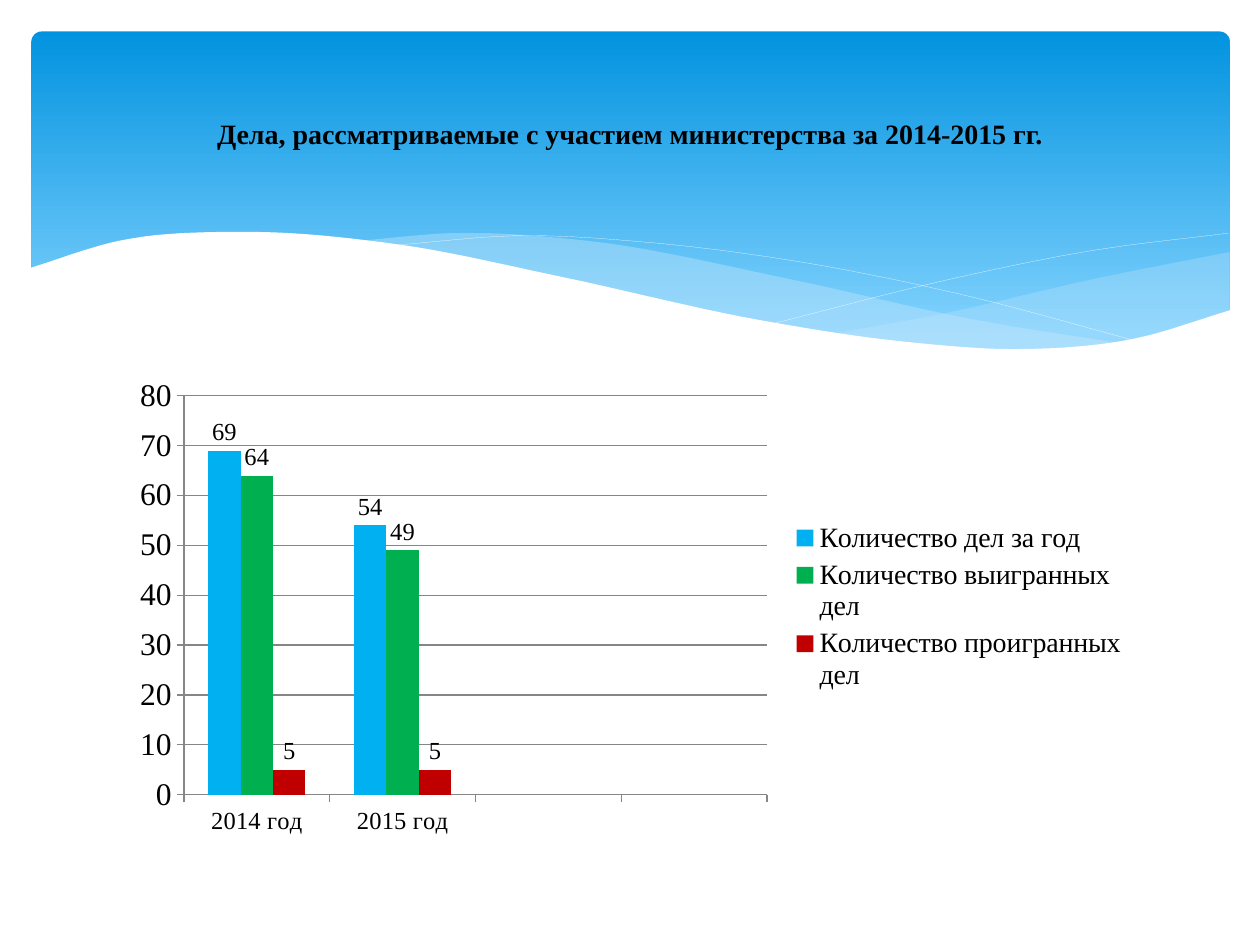
from lxml import etree
from pptx import Presentation, util as u
from pptx.chart.data import CategoryChartData
from pptx.dml.color import RGBColor
from pptx.enum import chart as ch, shapes, text
from pptx.oxml.ns import qn

SERIF = "Times New Roman"
BLACK, WHITE, GRAY, PALE_BLUE = "000000", "FFFFFF", "868686", "C6E7FC"
UNITS_PER_INCH = 1000
STEPS = 10

RIGHT_TOP = [(6.61, 2.65), (7.53, 2.48), (8.61, 2.23), (9.76, 2)]
RIGHT_BOTTOM = [(6.61, 2.65), (7.45, 2.75), (8.14, 2.78), (8.97, 2.7), (9.76, 2.47)]
MIDDLE_TOP = [(2.86, 1.91), (3.61, 1.85), (4.65, 1.91), (6.29, 2.22), (7.75, 2.54), (8.93, 2.73)]
MIDDLE_BOTTOM = [(2.86, 1.91), (4.91, 2.32), (6.34, 2.61), (7.48, 2.76), (8.18, 2.78), (8.93, 2.73)]
FALLING_CURVE = [(3.09, 1.95), (4.16, 1.87), (5.1, 1.92), (6.36, 2.08), (7.6, 2.33), (9.07, 2.72)]
RISING_CURVE = [(6.13, 2.57), (7.48, 2.23), (8.66, 1.99), (9.75, 1.85)]
WHITE_TOP = [(0.23, 2.13), (0.95, 1.91), (1.93, 1.84), (3.16, 1.94), (4.47, 2.2),
             (6.03, 2.54), (7.26, 2.72), (8.09, 2.77), (8.99, 2.69), (9.77, 2.46)]
WHITE_BOTTOM = [(0.23, 3.29), (9.77, 3.29)]

CATEGORIES = ["2014 год", "2015 год", "", ""]
SERIES = [
    ("Количество дел за год", (69, 54, None, None), "00B0F0"),
    ("Количество выигранных дел", (64, 49, None, None), "00B050"),
    ("Количество проигранных дел", (5, 5, None, None), "C00000"),
]


def rgb(value):
    """Turn a hex string into a colour."""
    return RGBColor.from_string(value)


def fill_solid(fill, color):
    """Give a fill one plain colour."""
    fill.solid()
    fill.fore_color.rgb = rgb(color)


def set_font(font, size, name=SERIF, bold=False):
    """Format a font in black."""
    font.size, font.name, font.bold = u.Pt(size), name, bold
    font.color.rgb = rgb(BLACK)


def knot_slopes(knots):
    """Return the slope at each knot, averaged over its two neighbouring spans."""
    spans = [(x1 - x0, (y1 - y0) / (x1 - x0)) for (x0, y0), (x1, y1) in zip(knots, knots[1:])]
    inner = [(w1 * s0 + w0 * s1) / (w0 + w1) for (w0, s0), (w1, s1) in zip(spans, spans[1:])]
    return [spans[0][1], *inner, spans[-1][1]]


def smooth(knots):
    """Return points on a cubic Hermite curve that runs through the knots."""
    slopes = knot_slopes(knots)
    points = [knots[0]]
    for i, ((x0, y0), (x1, y1)) in enumerate(zip(knots, knots[1:])):
        width = x1 - x0
        for step in range(1, STEPS + 1):
            t = step / STEPS
            ease = t * t * (3 - 2 * t)
            bend = t * (1 - t) * ((1 - t) * slopes[i] - t * slopes[i + 1])
            points.append((x0 + t * width, y0 + ease * (y1 - y0) + width * bend))
    return points


def add_outline(slide, points, closed):
    """Build a freeform from points in inches."""
    grid = [(round(x * UNITS_PER_INCH), round(y * UNITS_PER_INCH)) for x, y in points]
    builder = slide.shapes.build_freeform(*grid[0], scale=u.Inches(1) / UNITS_PER_INCH)
    builder.add_line_segments(grid[1:], close=closed)
    sp = builder.convert_to_shape()
    sp.shadow.inherit = False
    return sp


def add_wave(slide, top, bottom, color, opacity=100):
    """Fill the area between two smooth edges, with opacity in percent."""
    sp = add_outline(slide, smooth(top) + smooth(bottom)[::-1], True)
    sp.line.fill.background()
    fill_solid(sp.fill, color)
    if opacity < 100:
        clr = sp._element.spPr.find(qn("a:solidFill"))[0]
        etree.SubElement(clr, qn("a:alpha")).set("val", str(opacity * 1000))


def add_curve(slide, knots):
    """Add a white hairline curve."""
    sp = add_outline(slide, smooth(knots), False)
    sp.fill.background()
    sp.line.color.rgb = rgb(WHITE)
    sp.line.width = u.Pt(0.1)


def add_banner(slide):
    """Add the rounded blue gradient panel."""
    sp = slide.shapes.add_shape(shapes.MSO_SHAPE.ROUNDED_RECTANGLE,
                                *map(u.Inches, (0.25, 0.25, 9.51, 2.7)))
    sp.shadow.inherit = False
    sp.adjustments[0] = 0.03
    sp.line.fill.background()
    sp.fill.gradient()
    sp.fill.gradient_angle = 270
    stops = ((0, "0293E0"), (0.9, "83D3FE"))
    for stop, (position, color) in zip(sp.fill.gradient_stops, stops):
        stop.position = position
        stop.color.rgb = rgb(color)


def format_axis(axis, size):
    """Style the line, ticks and labels of an axis."""
    axis.major_tick_mark = ch.XL_TICK_MARK.OUTSIDE
    axis.minor_tick_mark = ch.XL_TICK_MARK.NONE
    axis.format.line.color.rgb = rgb(GRAY)
    set_font(axis.tick_labels.font, size)


def format_series(series, color):
    """Colour the columns of a series and label them with their values."""
    fill_solid(series.format.fill, color)
    labels = series.data_labels
    labels.show_value = True
    labels.position = ch.XL_LABEL_POSITION.OUTSIDE_END
    set_font(labels.font, 14)


def add_cases_chart(slide):
    """Add the clustered columns of court cases by year."""
    data = CategoryChartData()
    data.categories = CATEGORIES
    for name, values, _ in SERIES:
        data.add_series(name, values)
    chart = slide.shapes.add_chart(ch.XL_CHART_TYPE.COLUMN_CLUSTERED,
                                   *map(u.Inches, (0.95, 2.93, 8.1, 3.77)), data).chart
    set_font(chart.font, 18, "Calibri")
    chart.has_title = False
    chart.has_legend = True
    chart.legend.position = ch.XL_LEGEND_POSITION.RIGHT
    chart.legend.include_in_layout = False
    set_font(chart.legend.font, 16)
    format_axis(chart.category_axis, 14)
    axis = chart.value_axis
    format_axis(axis, 18)
    axis.minimum_scale, axis.maximum_scale, axis.major_unit = 0, 80, 10
    axis.has_major_gridlines = True
    axis.major_gridlines.format.line.color.rgb = rgb(GRAY)
    plot = chart.plots[0]
    plot.gap_width, plot.overlap, plot.vary_by_categories = 150, 0, False
    for series, (_, _, color) in zip(plot.series, SERIES):
        format_series(series, color)


def set_title(slide, wording):
    """Place, fill and format the title in front of the banner."""
    sp = slide.shapes.title
    sp.left, sp.top, sp.width, sp.height = map(u.Inches, (0.5, 0.37, 9, 1.37))
    tf = sp.text_frame
    tf.text = wording
    tf.word_wrap = True
    tf.vertical_anchor = text.MSO_ANCHOR.MIDDLE
    p = tf.paragraphs[0]
    p.alignment = text.PP_ALIGN.CENTER
    set_font(p.runs[0].font, 16, bold=True)
    slide.shapes._spTree.append(sp._element)


def main():
    """Build the slide and save it."""
    prs = Presentation()
    prs.slide_width, prs.slide_height = u.Inches(10), u.Inches(7.5)
    slide = prs.slides.add_slide(prs.slide_layouts[5])
    add_banner(slide)
    add_wave(slide, RIGHT_TOP, RIGHT_BOTTOM, PALE_BLUE, 29)
    add_wave(slide, MIDDLE_TOP, MIDDLE_BOTTOM, PALE_BLUE, 40)
    for knots in (FALLING_CURVE, RISING_CURVE):
        add_curve(slide, knots)
    add_wave(slide, WHITE_TOP, WHITE_BOTTOM, WHITE)
    add_cases_chart(slide)
    set_title(slide, "Дела, рассматриваемые с участием министерства за 2014-2015 гг.")
    prs.save("out.pptx")


if __name__ == "__main__":
    main()
